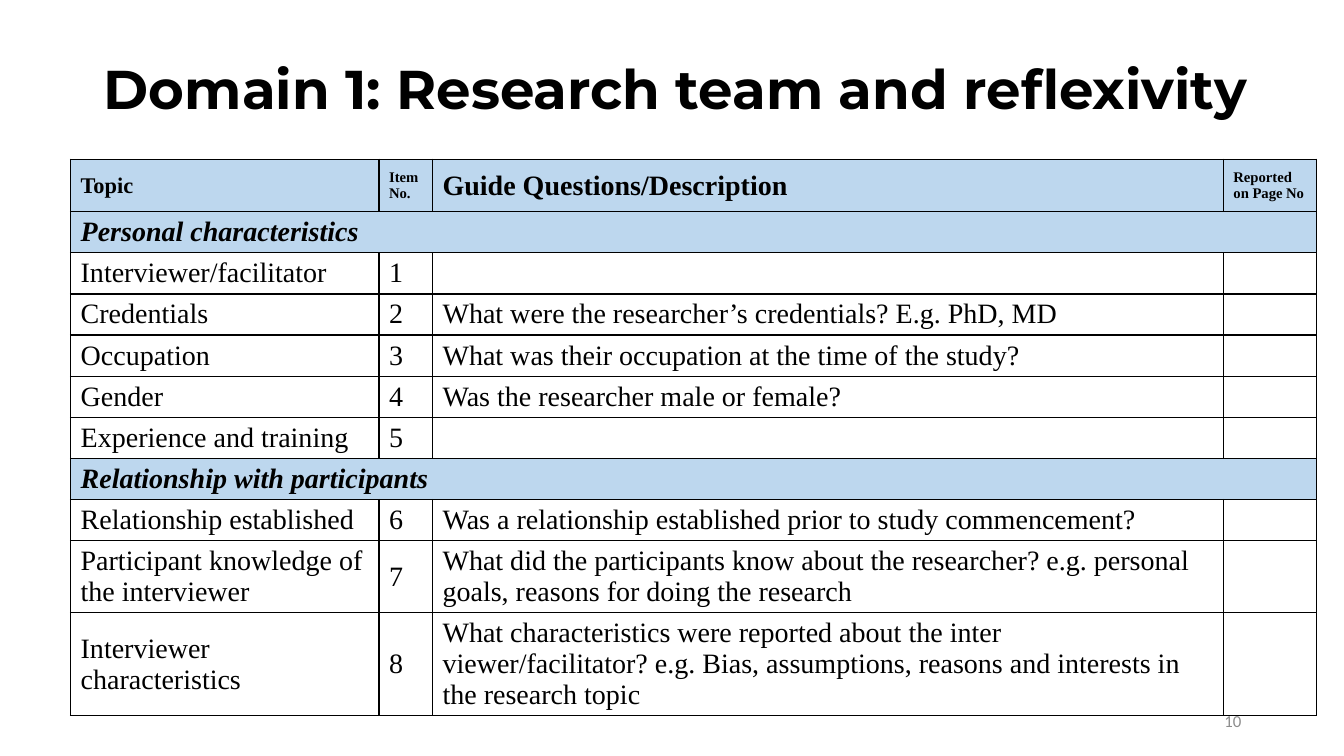
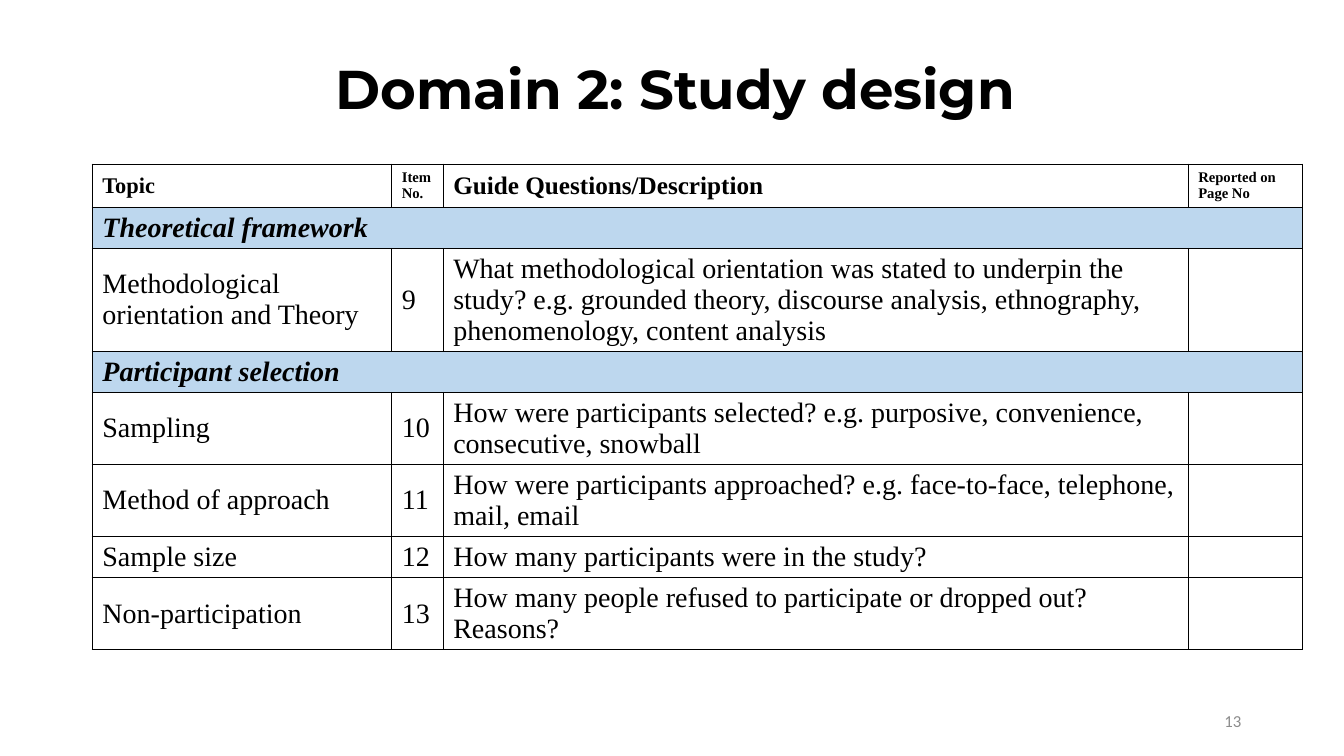
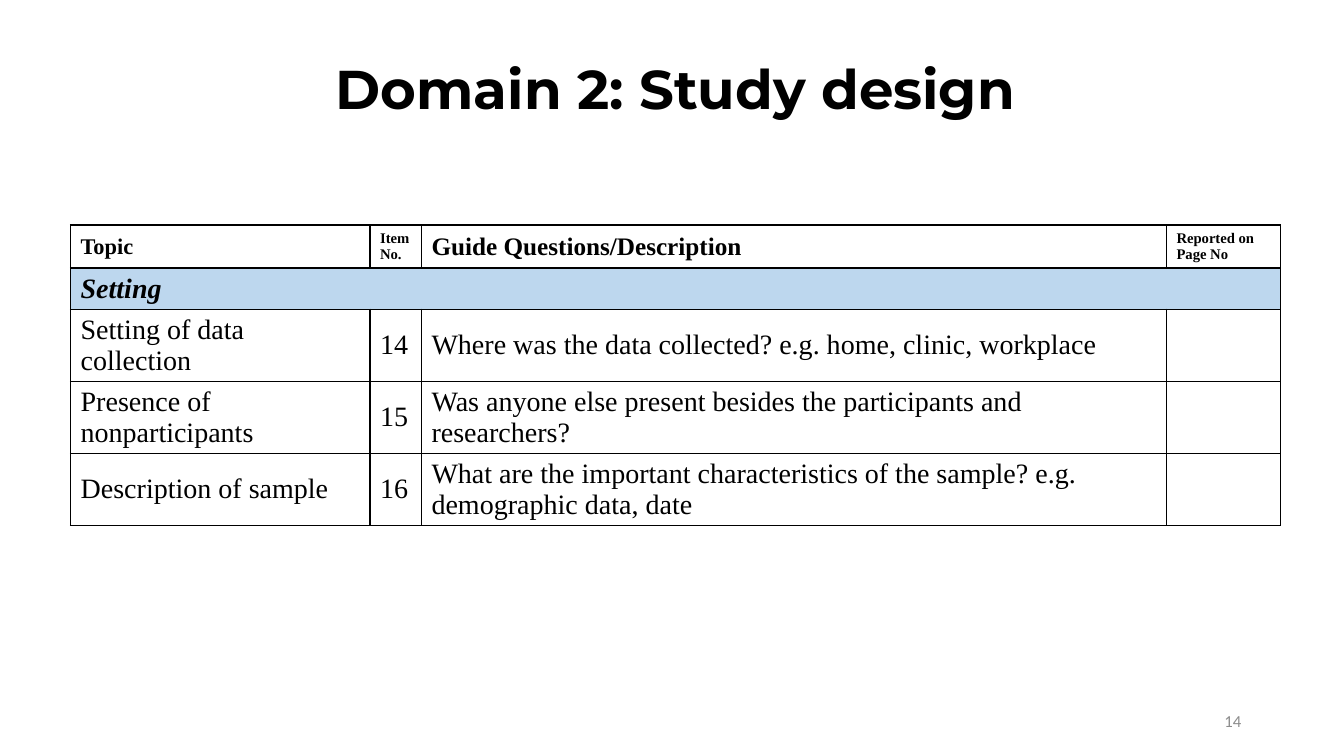
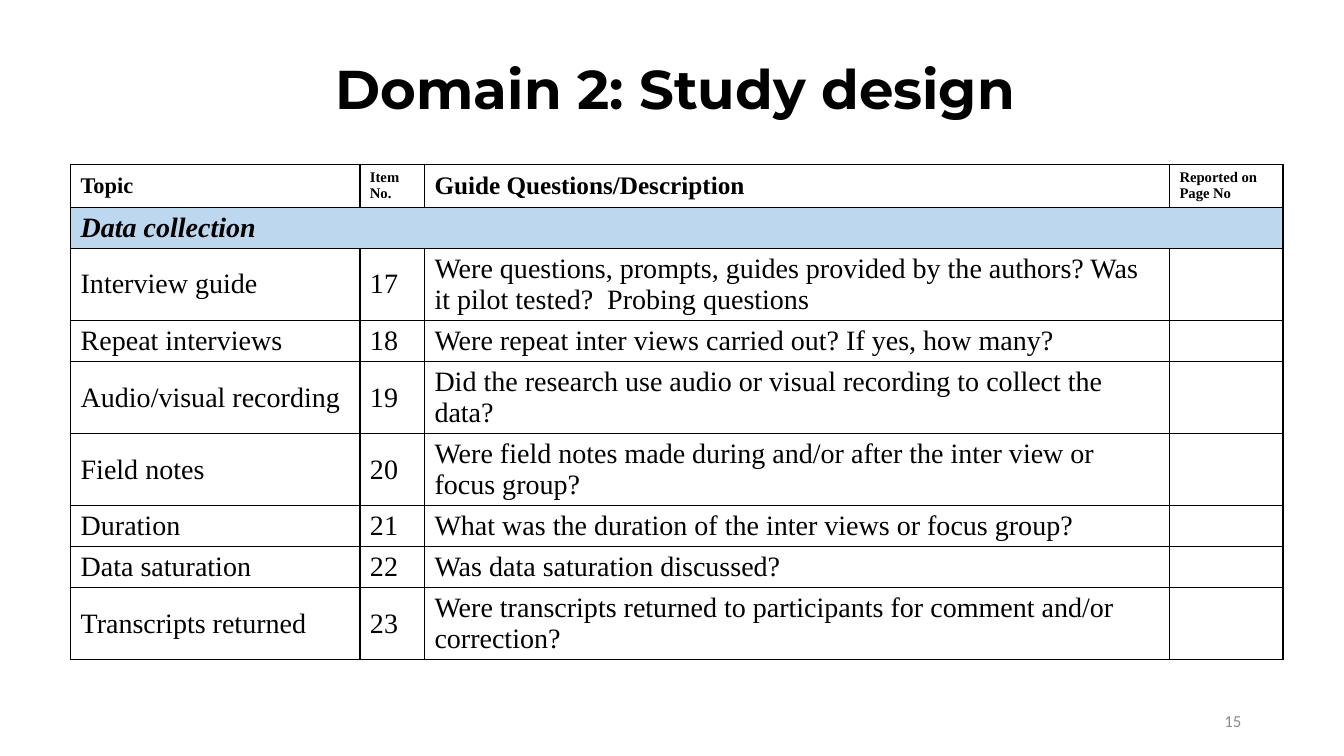
from itertools import count

from lxml.etree import SubElement
from pptx import Presentation
from pptx.dml.color import RGBColor
from pptx.enum.text import MSO_ANCHOR, PP_ALIGN
from pptx.oxml.ns import qn
from pptx.util import Inches, Pt

# Shared style
BLACK = RGBColor(0x00, 0x00, 0x00)
GREY = RGBColor(0x8C, 0x8C, 0x8C)
BLUE = RGBColor(0xBD, 0xD7, 0xEE)
SERIF = "Times New Roman"
HEADS = ["Topic", "Item No.", "Guide Questions/Description", "Reported on Page No"]

# Grid: one hundred columns by one hundred rows
deck = Presentation()
deck.slide_width, deck.slide_height = Inches(13.33), Inches(7.5)
COL, ROW = deck.slide_width / 100, deck.slide_height / 100
PAD, LINE = 1.35, 4.09  # padding of a table row and height of a text line
HEAD = 5.69  # plain header row

# Each slide: title, page, table left and top, column widths, header height,
# header fill, size of the question heading, and the rows.
# A plain string is a section band; otherwise topic, question, text lines.
SLIDES = [
    ("Domain 1: Research team and reflexivity", 10, 5.25, 21.07,
     (22.95, 3.98, 58.85, 6.94), 6.93, BLUE, 20, [
         "Personal characteristics",
         ("Interviewer/facilitator", "", 1),
         ("Credentials", "What were the researcher’s credentials? E.g. PhD, MD", 1),
         ("Occupation", "What was their occupation at the time of the study?", 1),
         ("Gender", "Was the researcher male or female?", 1),
         ("Experience and training", "", 1),
         "Relationship with participants",
         ("Relationship established",
          "Was a relationship established prior to study commencement?", 1),
         ("Participant knowledge of the interviewer",
          "What did the participants know about the researcher? e.g. personal "
          "goals, reasons for doing the research", 2),
         ("Interviewer characteristics",
          "What characteristics were reported about the inter "
          "viewer/facilitator? e.g. Bias, assumptions, reasons and interests in "
          "the research topic", 3),
     ]),
    ("Domain 2: Study design", 13, 6.87, 21.73,
     (22.28, 3.83, 55.44, 8.48), HEAD, None, 18, [
         "Theoretical framework",
         ("Methodological orientation and Theory",
          "What methodological orientation was stated to underpin the study? "
          "e.g. grounded theory, discourse analysis, ethnography, "
          "phenomenology, content analysis", 3),
         "Participant selection",
         ("Sampling",
          "How were participants selected? e.g. purposive, convenience, "
          "consecutive, snowball", 2),
         ("Method of approach",
          "How were participants approached? e.g. face-to-face, telephone, "
          "mail, email", 2),
         ("Sample size", "How many participants were in the study?", 1),
         ("Non-participation",
          "How many people refused to participate or dropped out? Reasons?", 2),
     ]),
    ("Domain 2: Study design", 14, 5.25, 29.77,
     (22.28, 3.83, 55.44, 8.48), HEAD, None, 18, [
         "Setting",
         ("Setting of data collection",
          "Where was the data collected? e.g. home, clinic, workplace", 2),
         ("Presence of nonparticipants",
          "Was anyone else present besides the participants and researchers?", 2),
         ("Description of sample",
          "What are the important characteristics of the sample? e.g. "
          "demographic data, date", 2),
     ]),
    ("Domain 2: Study design", 15, 5.25, 21.73,
     (21.53, 4.8, 55.44, 8.44), HEAD, None, 18, [
         "Data collection",
         ("Interview guide",
          "Were questions, prompts, guides provided by the authors? Was it "
          "pilot tested?  Probing questions", 2),
         ("Repeat interviews",
          "Were repeat inter views carried out? If yes, how many?", 1),
         ("Audio/visual recording",
          "Did the research use audio or visual recording to collect the data?", 2),
         ("Field notes",
          "Were field notes made during and/or after the inter view or focus "
          "group?", 2),
         ("Duration", "What was the duration of the inter views or focus group?", 1),
         ("Data saturation", "Was data saturation discussed?", 1),
         ("Transcripts returned",
          "Were transcripts returned to participants for comment and/or "
          "correction?", 2),
     ]),
]


def write(frame, text, size, face=SERIF, tint=BLACK, bold=False, slant=False):
    """Add one run to the first paragraph and return that paragraph."""
    para = frame.paragraphs[0]
    para.line_spacing = 1.0
    run = para.add_run()
    run.text = text
    font = run.font
    font.name, font.size, font.bold, font.italic = face, Pt(size), bold, slant
    font.color.rgb = tint
    return para


def frame_cell(cell, fill):
    """Rule all four sides of a cell, centre its text and set its fill."""
    props = cell._tc.get_or_add_tcPr()
    for side in ("a:lnL", "a:lnR", "a:lnT", "a:lnB"):
        edge = SubElement(props, qn(side), w=str(Pt(1)))
        SubElement(SubElement(edge, qn("a:solidFill")), qn("a:srgbClr"), val=str(BLACK))
    cell.vertical_anchor = MSO_ANCHOR.MIDDLE
    cell.margin_top = cell.margin_bottom = 0
    if fill is None:
        cell.fill.background()
    else:
        cell.fill.solid()
        cell.fill.fore_color.rgb = fill


item = count(1)
for title, page, left, top, widths, head, tint, size, rows in SLIDES:
    slide = deck.slides.add_slide(deck.slide_layouts[6])
    shapes = slide.shapes

    # Title
    box = shapes.add_textbox(int(3.62 * COL), int(2.53 * ROW),
                             int(93.25 * COL), int(19.33 * ROW))
    box.text_frame.word_wrap = True
    box.text_frame.vertical_anchor = MSO_ANCHOR.MIDDLE
    para = write(box.text_frame, title, 39, "Montserrat", bold=True)
    para.alignment, para.line_spacing = PP_ALIGN.CENTER, 0.9

    # Table grid
    highs = [head] + [PAD + LINE * (1 if isinstance(row, str) else row[2]) for row in rows]
    table = shapes.add_table(len(highs), len(widths), int(left * COL), int(top * ROW),
                             int(sum(widths) * COL), int(sum(highs) * ROW)).table
    table.first_row = table.horz_banding = False
    for column, wide in zip(table.columns, widths):
        column.width = int(wide * COL)
    for line, high in zip(table.rows, highs):
        line.height = int(high * ROW)

    # Header row
    for cell, text, points in zip(table.rows[0].cells, HEADS, (16, 10.5, size, 10.5)):
        frame_cell(cell, tint)
        write(cell.text_frame, text, points, bold=True)

    # Section bands and numbered items
    for spot, row in enumerate(rows, 1):
        band = isinstance(row, str)
        cells = list(table.rows[spot].cells)
        for cell in cells:
            frame_cell(cell, BLUE if band else None)
        if band:
            cells[0].merge(cells[-1])
            texts = [row]
        else:
            texts = [row[0], str(next(item)), row[1]]
        for cell, text in zip(cells, texts):
            if text:
                write(cell.text_frame, text, 20, bold=band, slant=band)

    # Page number
    box = shapes.add_textbox(int(70.6 * COL), int(92.67 * ROW),
                             int(22.5 * COL), int(5.33 * ROW))
    box.text_frame.word_wrap = True
    box.text_frame.vertical_anchor = MSO_ANCHOR.MIDDLE
    para = write(box.text_frame, str(page), 12, "Calibri", GREY)
    para.alignment = PP_ALIGN.RIGHT

deck.save("out.pptx")
